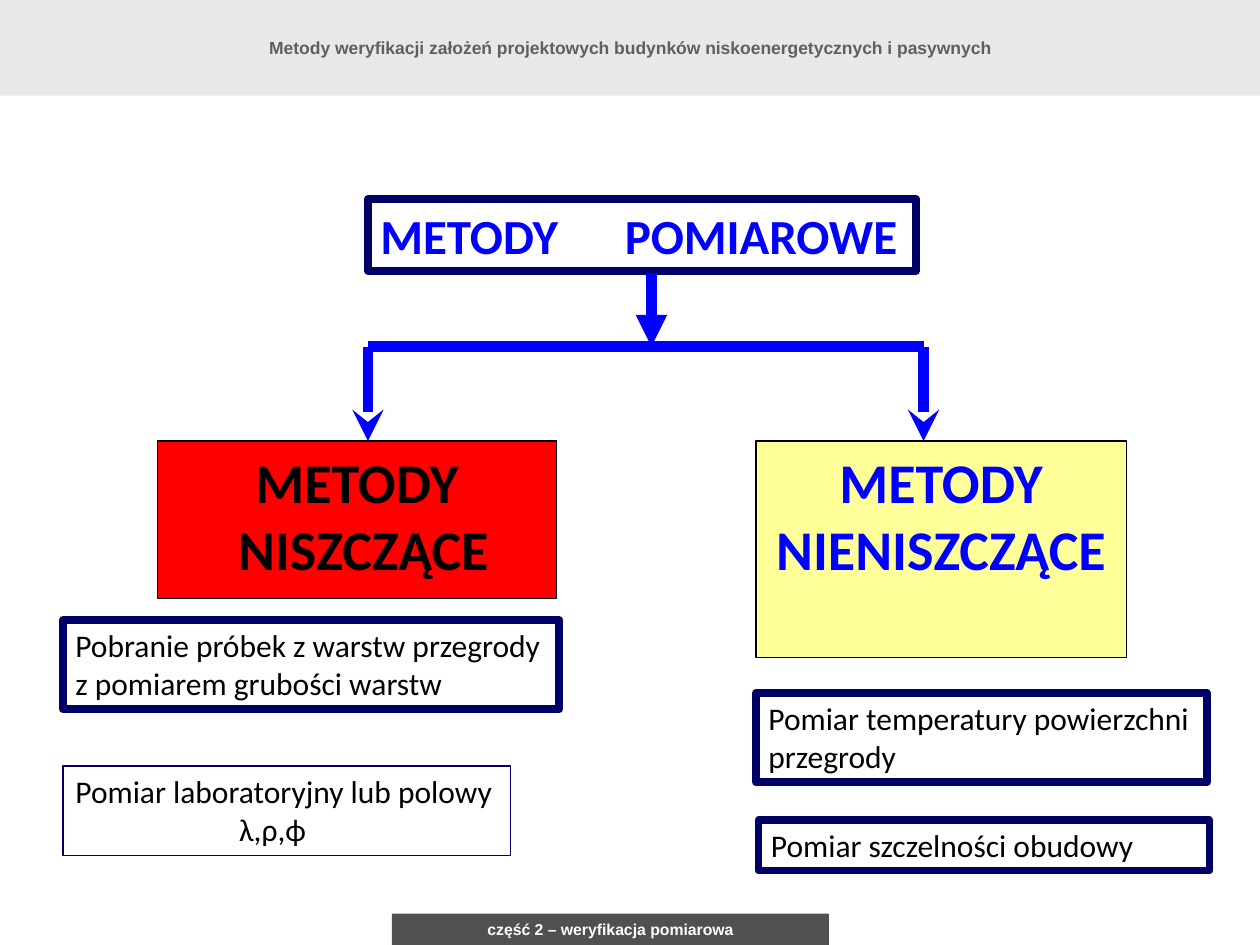
from lxml import etree
from pptx import Presentation
from pptx import util as u
from pptx.dml.color import RGBColor
from pptx.enum import shapes, text
from pptx.oxml.ns import qn

NAVY, BLUE, BLACK = "000066", "0000FF", "000000"
LEFT, CENTER = text.PP_ALIGN.LEFT, text.PP_ALIGN.CENTER


def paint(color_format, hex_color):
    color_format.rgb = RGBColor.from_string(hex_color)


def add_box(place, lines, size, color=BLACK, bold=False, font="Calibri", fill=None,
            border=None, border_width=0.75, align=LEFT, wrap=True, grow=True):
    """Add a bordered rectangle with one paragraph for each line of text."""
    box = slide.shapes.add_shape(shapes.MSO_SHAPE.RECTANGLE, *map(u.Inches, place))
    box.shadow.inherit = False
    if fill:
        box.fill.solid()
        paint(box.fill.fore_color, fill)
    else:
        box.fill.background()
    if border:
        paint(box.line.color, border)
        box.line.width = u.Pt(border_width)
    else:
        box.line.fill.background()
    frame = box.text_frame
    frame.text = "\n".join(lines)
    frame.word_wrap = wrap
    frame.vertical_anchor = text.MSO_ANCHOR.TOP
    frame.auto_size = (text.MSO_AUTO_SIZE.SHAPE_TO_FIT_TEXT if grow
                       else text.MSO_AUTO_SIZE.NONE)
    for paragraph in frame.paragraphs:
        paragraph.alignment = align
        for run in paragraph.runs:
            run.font.name, run.font.size, run.font.bold = font, u.Pt(size), bold
            paint(run.font.color, color)
    return box


deck = Presentation()
deck.slide_width, deck.slide_height = u.Inches(10), u.Inches(7.5)
slide = deck.slides.add_slide(deck.slide_layouts[6])

# The two families of methods
add_box((1.25, 3.5, 3.17, 1.25), ["METODY", " NISZCZĄCE"], 32, bold=True,
        fill="FF0000", border=BLACK, align=CENTER, grow=False)
add_box((6, 3.5, 2.94, 1.72), ["METODY", "NIENISZCZĄCE"], 32, BLUE, bold=True,
        fill="FFFF99", border=BLACK, align=CENTER, grow=False)

# Root of the tree, its two words set apart by a tab stop
root = add_box((2.92, 1.58, 4.35, 0.57), ["METODY\tPOMIAROWE"], 28, BLUE, bold=True,
               border=NAVY, border_width=4.5, wrap=False)
root_properties = root.text_frame.paragraphs[0]._p.get_or_add_pPr()
tab_stops = etree.SubElement(root_properties, qn("a:tabLst"))
etree.SubElement(tab_stops, qn("a:tab"), pos=str(u.Inches(1.94)), algn="l")

# Branches
left_x, right_x, root_x = 2.92, 7.33, 5.17
branch_y, methods_y = 2.75, 3.5
for x1, y1, x2, y2, arrowhead in [
    (left_x, branch_y, right_x, branch_y, None),
    (left_x, branch_y, left_x, methods_y, "stealth"),
    (right_x, branch_y, right_x, methods_y, "stealth"),
    (root_x, 2.17, root_x, branch_y, "triangle"),
]:
    branch = slide.shapes.add_connector(
        shapes.MSO_CONNECTOR.STRAIGHT, *map(u.Inches, (x1, y1, x2, y2)))
    paint(branch.line.color, BLUE)
    branch.line.width = u.Pt(6)
    if arrowhead:
        etree.SubElement(branch.line._get_or_add_ln(), qn("a:tailEnd"), type=arrowhead)
    etree.SubElement(branch._element.spPr, qn("a:effectLst"))

# Examples of each family
laboratory = add_box((0.5, 6.08, 3.55, 0.71),
                     ["Pomiar laboratoryjny lub polowy", "λ,ρ,ϕ"], 18,
                     border=NAVY, wrap=False)
symbols = laboratory.text_frame.paragraphs[1]
symbols._p.get_or_add_pPr().set("marL", str(u.Inches(1.3)))

for place, lines, wrap in [
    ((0.5, 4.92, 3.94, 0.71),
     ["Pobranie próbek z warstw przegrody", "z pomiarem grubości warstw"], False),
    ((6, 5.5, 3.58, 0.71), ["Pomiar temperatury powierzchni przegrody"], True),
    ((6.02, 6.51, 3.58, 0.4), ["Pomiar szczelności obudowy"], True),
]:
    add_box(place, lines, 18, border=NAVY, border_width=4.5, wrap=wrap)

# Footer and header
add_box((3.11, 7.25, 3.47, 0.25), ["część 2 – weryfikacja pomiarowa"], 9, "FFFFFF",
        bold=True, font="Arial", fill="505050", align=CENTER)
header = add_box(
    (0, 0, 10, 0.76),
    ["Metody weryfikacji założeń projektowych budynków niskoenergetycznych i pasywnych"],
    10, "5F5F5F", bold=True, font="Arial", fill="DDDDDD", align=CENTER, wrap=False,
    grow=False)
header.text_frame.vertical_anchor = text.MSO_ANCHOR.MIDDLE
header_color = header._element.spPr.find(qn("a:solidFill")).find(qn("a:srgbClr"))
etree.SubElement(header_color, qn("a:alpha"), val="65000")

deck.save("out.pptx")
